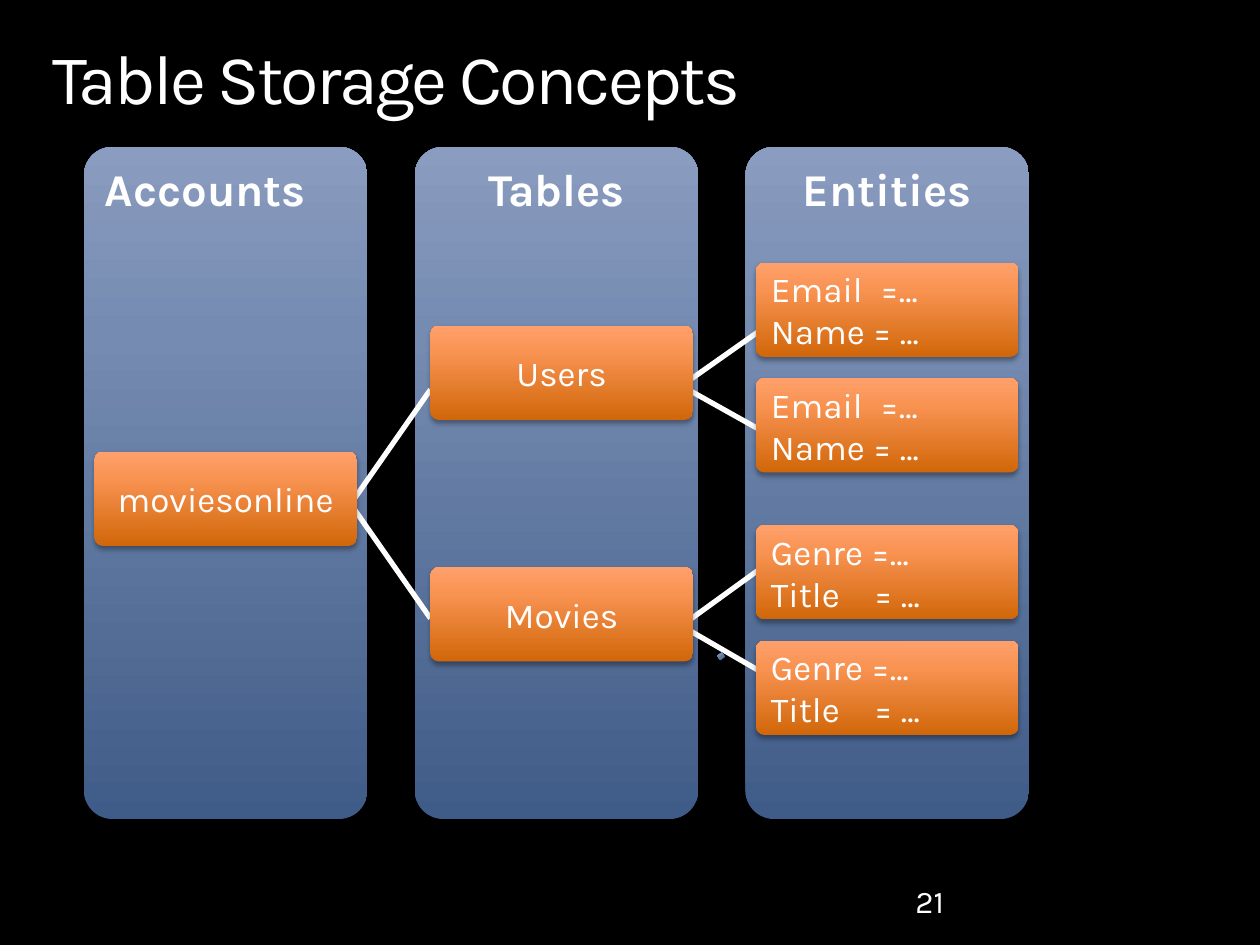
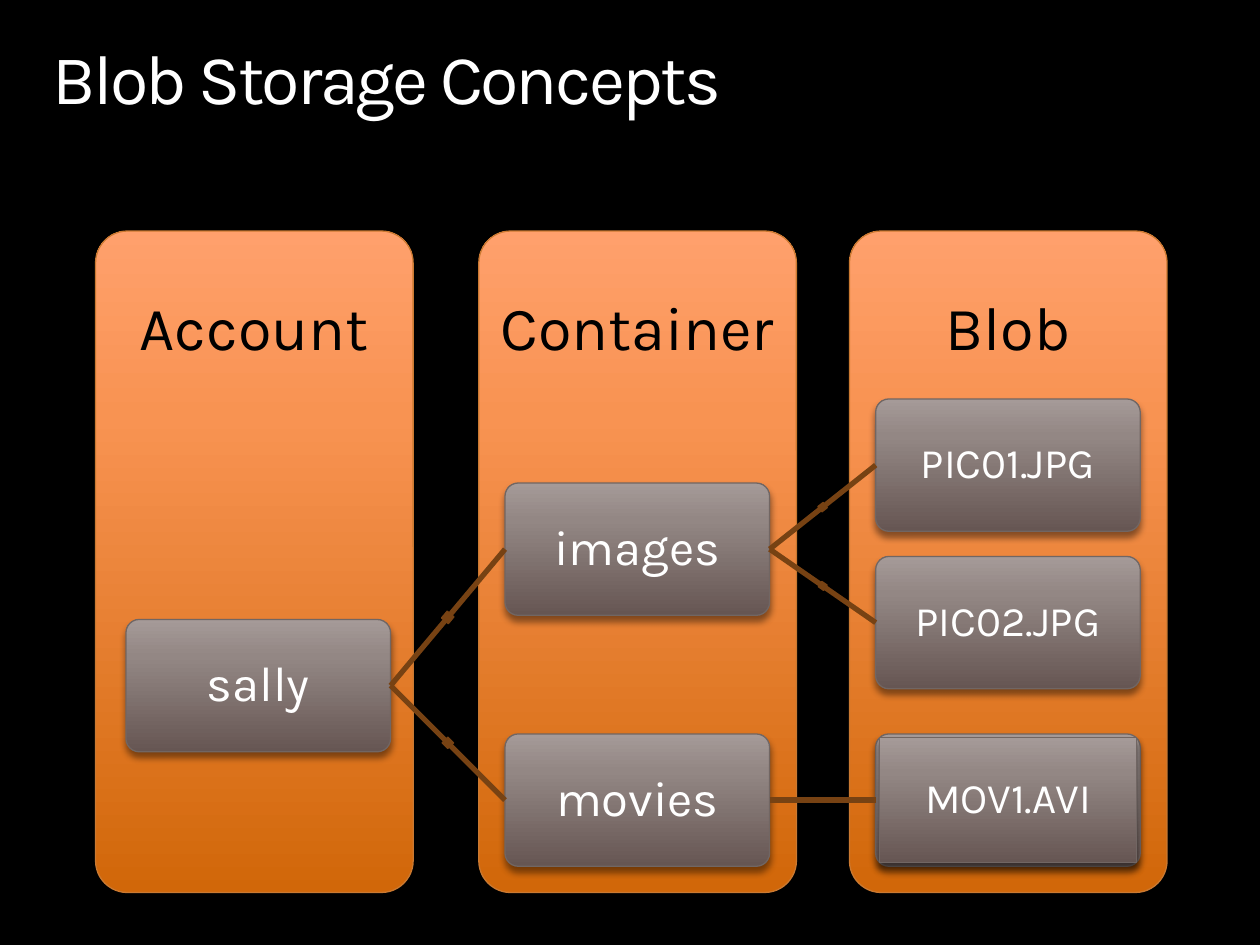
import math
from dataclasses import dataclass

from lxml import etree
from pptx import Presentation
from pptx import util as u
from pptx.dml.color import RGBColor
from pptx.enum import shapes, text
from pptx.oxml.ns import qn

COLS, ROWS = 120, 90  # grid over the whole slide


@dataclass(frozen=True)
class Theme:
    font: str = "Karla"
    back: str = "000000"
    light: str = "FFFFFF"
    dark: str = "000000"
    brown: str = "774213"
    orange_edge: str = "CA7931"
    grey_edge: str = "716663"
    # gradients run from the bottom up
    blue: tuple = ((0, "3F5B87"), (72, "758BB1"), (100, "8A9CBF"))
    orange: tuple = ((0, "D16709"), (72, "F89352"), (100, "FFA06C"))
    grey: tuple = ((0, "665653"), (72, "938784"), (100, "A59A98"))
    # shadows: opacity %, blur, distance
    soft: tuple = (35, 3.1, 1.8)
    deep: tuple = (43, 4, 3)
    title: int = 40
    heading: int = 35
    label: int = 28
    panel: int = 26
    file: int = 24
    item: int = 20
    number: int = 18


T = Theme()

prs = Presentation()
prs.slide_width, prs.slide_height = u.Inches(10), u.Inches(7.5)
CELL_W, CELL_H = prs.slide_width / COLS, prs.slide_height / ROWS


@dataclass(frozen=True)
class Box:
    """A region in grid cells."""
    x: float
    y: float
    w: float
    h: float

    def sub(self, dx, dy, w, h):
        return Box(self.x + dx, self.y + dy, w, h)

    def emu(self):
        return (round(self.x * CELL_W), round(self.y * CELL_H),
                round(self.w * CELL_W), round(self.h * CELL_H))


def rgb(value):
    return RGBColor.from_string(value)


def child(parent, tag, **attrs):
    return etree.SubElement(parent, qn(tag), {k: str(v) for k, v in attrs.items()})


def paint(sp, fill, edge=None, shadow=None):
    if isinstance(fill, str):
        sp.fill.solid()
        sp.fill.fore_color.rgb = rgb(fill)
    else:
        sp.fill.gradient()
        sp.fill.gradient_angle = 90
        stops = sp._element.spPr.find(".//" + qn("a:gsLst"))
        for old in list(stops):
            stops.remove(old)
        for pos, color in fill:
            child(child(stops, "a:gs", pos=pos * 1000), "a:srgbClr", val=color)
    if edge:
        sp.line.color.rgb = rgb(edge)
        sp.line.width = u.Pt(0.75)
    else:
        sp.line.fill.background()
    sp.shadow.inherit = False
    if shadow:
        alpha, blur, dist = shadow
        outer = child(sp._element.spPr.find(qn("a:effectLst")), "a:outerShdw",
                      blurRad=u.Pt(blur), dist=u.Pt(dist), dir=5400000, rotWithShape=0)
        child(child(outer, "a:srgbClr", val="000000"), "a:alpha", val=alpha * 1000)


def write(sp, lines, size, color=T.light, align=text.PP_ALIGN.LEFT, anchor=text.MSO_ANCHOR.TOP,
          inset=(0.1, 0.05), bold=False, leading=None, tab=None, tracking=None):
    tf = sp.text_frame
    tf.word_wrap = True
    tf.vertical_anchor = anchor
    tf.margin_left = tf.margin_right = u.Inches(inset[0])
    tf.margin_top = tf.margin_bottom = u.Inches(inset[1])
    for i, line in enumerate(lines):
        p = tf.add_paragraph() if i else tf.paragraphs[0]
        p.add_run().text = line
        p.alignment = align
        if leading:
            p.line_spacing = leading
        if tab and "\t" in line:
            tabs = child(p._p.get_or_add_pPr(), "a:tabLst")
            child(tabs, "a:tab", pos=u.Inches(tab), algn="l")
        p.font.name, p.font.size, p.font.bold = T.font, u.Pt(size), bold
        p.font.color.rgb = rgb(color)
        if tracking:
            p._p.pPr.find(qn("a:defRPr")).set("spc", str(tracking))


def shape(slide, box, fill, edge=None, shadow=None, corner=None):
    kind = shapes.MSO_SHAPE.RECTANGLE if corner is None else shapes.MSO_SHAPE.ROUNDED_RECTANGLE
    sp = slide.shapes.add_shape(kind, *box.emu())
    if corner is not None:
        sp.adjustments[0] = corner
    paint(sp, fill, edge, shadow)
    return sp


def textbox(slide, box, words, size, **style):
    write(slide.shapes.add_textbox(*box.emu()), [words], size, **style)


def link(slide, color, start=(0, 0), end=(0, 0), nodes=None):
    (x1, y1), (x2, y2) = start, end
    line = slide.shapes.add_connector(
        shapes.MSO_CONNECTOR.STRAIGHT, round(x1 * CELL_W), round(y1 * CELL_H),
        round(x2 * CELL_W), round(y2 * CELL_H))
    if nodes:
        line.begin_connect(nodes[0], 3)
        line.end_connect(nodes[1], 1)
    line.line.color.rgb = rgb(color)
    line.line.width = u.Pt(3)
    child(line._element.spPr, "a:effectLst")
    return line


def new_slide(title):
    slide = prs.slides.add_slide(prs.slide_layouts[6])
    slide.background.fill.solid()
    slide.background.fill.fore_color.rgb = rgb(T.back)
    textbox(slide, Box(5, 4.2, 110, 7.3), title, T.title, inset=(0, 0), leading=0.9, tracking=-150)
    return slide


CENTER, LEFT = text.PP_ALIGN.CENTER, text.PP_ALIGN.LEFT
MIDDLE = text.MSO_ANCHOR.MIDDLE


def table_diagram(slide, box):
    # Column panels
    pitch, width = 31.5, 27
    for i, (name, align) in enumerate(
            [("Accounts", LEFT), ("Tables", CENTER), ("Entities", CENTER)]):
        panel = shape(slide, box.sub(i * pitch, 0, width, box.h), T.blue, corner=0.1)
        write(panel, [name], T.panel, align=align, bold=True)

    # Branches: start point, then the ends
    for (x, y), ends in [((25.4, 34), [(33, 23.1), (33, 44.9)]),
                         ((56.9, 22.75), [(64.5, 17.4), (64.5, 27)]),
                         ((56.9, 45.6), [(64.5, 40.1), (64.5, 50)])]:
        for ex, ey in ends:
            link(slide, T.light, (box.x + x, box.y + y), (box.x + ex, box.y + ey))
    mark = shape(slide, box.sub(60.4, 48.25, 0.55, 0.5), T.blue)
    mark.rotation = 324.3

    # Items
    user, movie = ["Email\t=…", "Name = …"], ["Genre =…", "Title\t= …"]
    for x, y, lines, align, tab in [(1, 29, ["moviesonline"], CENTER, None),
                                    (33, 17, ["Users"], CENTER, None),
                                    (33, 40, ["Movies"], CENTER, None),
                                    (64, 11, user, LEFT, 0.87),
                                    (64, 22, user, LEFT, 0.87),
                                    (64, 36, movie, LEFT, 0.82),
                                    (64, 47, movie, LEFT, 0.82)]:
        item = shape(slide, box.sub(x, y, 25, 9), T.orange, shadow=T.soft, corner=0.09)
        write(item, lines, T.item, align=align, anchor=MIDDLE, tab=tab)


def blob_diagram(slide, box):
    centered = dict(align=CENTER, anchor=MIDDLE, leading=0.9)
    # Column panels with headings
    width = 30.25
    for x, name in [(0, "Account"), (36.5, "Container"), (71.8, "Blob")]:
        shape(slide, box.sub(x, 0, width, box.h), T.orange, T.orange_edge, T.deep, 0.1)
        textbox(slide, box.sub(x, 0, width, 0.3 * box.h), name, T.heading,
                color=T.dark, **centered)

    # Nodes
    node_w, node_h = 25.2, 12.6
    nodes = {}
    for x, y, name, size in [(2.9, 37, "sally", T.label),
                             (39, 24, "images", T.label), (39, 47.9, "movies", T.label),
                             (74.3, 16, "PIC01.JPG", T.file), (74.3, 31, "PIC02.JPG", T.file),
                             (74.3, 47.9, "MOV1.AVI", T.file)]:
        area = box.sub(x, y, node_w, node_h)
        nodes[name] = face = shape(slide, area, T.grey, T.grey_edge, T.deep, 0.1)
        if name == "MOV1.AVI":  # this node carries a square plate
            face = shape(slide, area.sub(0.36, 0.36, node_w - 0.72, node_h - 0.72),
                         T.grey, T.grey_edge, T.deep)
        write(face, [name], size, **centered)

    # Branches, each with a small square at its middle
    for a, b in [("sally", "images"), ("sally", "movies"), ("images", "PIC01.JPG"),
                 ("images", "PIC02.JPG"), ("movies", "MOV1.AVI")]:
        line = link(slide, T.brown, nodes=(nodes[a], nodes[b]))
        dx, dy = line.end_x - line.begin_x, line.end_y - line.begin_y
        side = 0.05 * math.hypot(dx, dy)
        mark = shape(slide, Box((line.begin_x + dx / 2 - side / 2) / CELL_W,
                                (line.begin_y + dy / 2 - side / 2) / CELL_H,
                                side / CELL_W, side / CELL_H), T.brown, T.brown)
        mark.rotation = math.degrees(math.atan2(dy, dx))


def main():
    slide = new_slide("Table Storage Concepts")
    table_diagram(slide, Box(8, 14, 90, 64))
    textbox(slide, Box(86, 83.4, 28, 4.8), "21", T.number)

    slide = new_slide("Blob Storage Concepts")
    blob_diagram(slide, Box(9.1, 22, 102, 63))

    prs.save("out.pptx")


if __name__ == "__main__":
    main()
